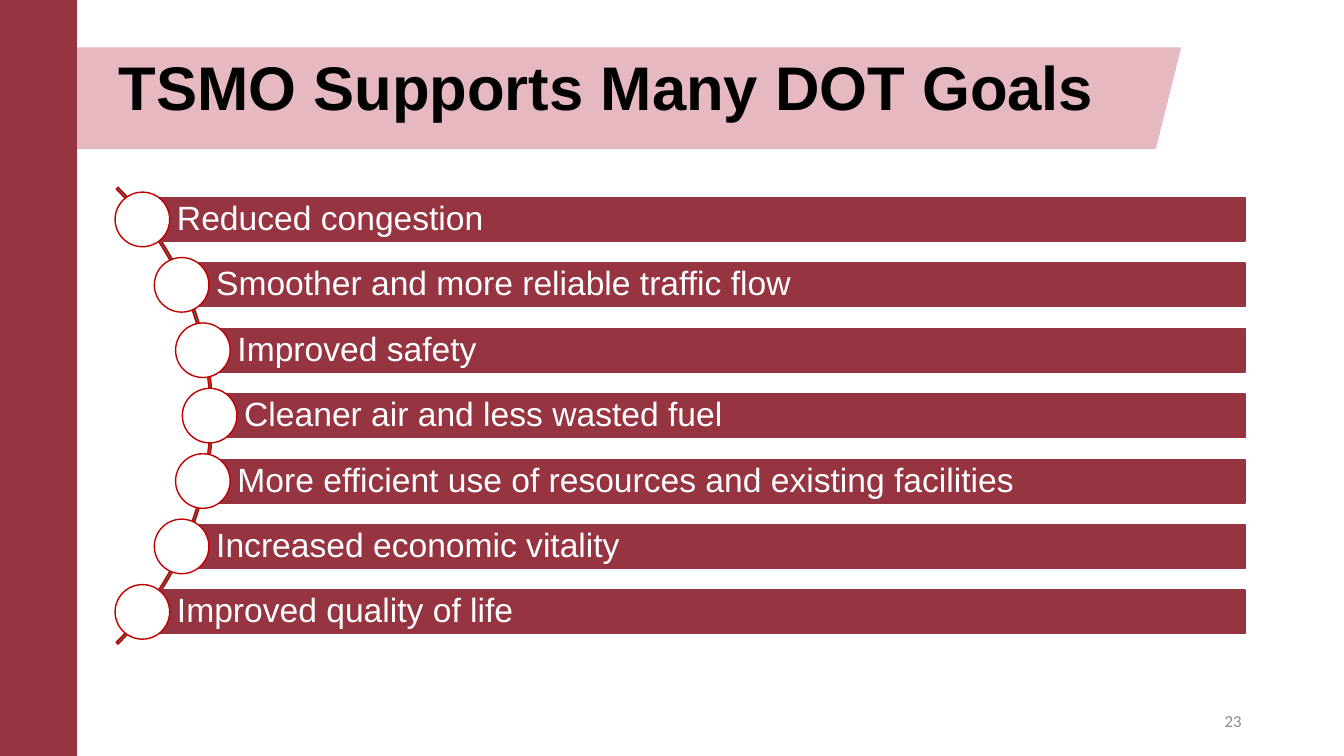
from math import sqrt

from pptx import Presentation
from pptx.dml.color import RGBColor
from pptx.enum.shapes import MSO_SHAPE
from pptx.enum.text import MSO_ANCHOR, PP_ALIGN
from pptx.util import Pt

RECTANGLE = MSO_SHAPE.RECTANGLE
PARALLELOGRAM = MSO_SHAPE.PARALLELOGRAM
BLOCK_ARC = MSO_SHAPE.BLOCK_ARC
OVAL = MSO_SHAPE.OVAL
MIDDLE = MSO_ANCHOR.MIDDLE
LEFT, RIGHT = PP_ALIGN.LEFT, PP_ALIGN.RIGHT

MAROON, PINK, RED = "963442", "E6B8BF", "C00000"
GREEN, WHITE, BLACK, GRAY = "427666", "FFFFFF", "000000", "8C8C8C"

GOALS = [
    "Reduced congestion",
    "Smoother and more reliable traffic flow",
    "Improved safety",
    "Cleaner air and less wasted fuel",
    "More efficient use of resources and existing facilities",
    "Increased economic vitality",
    "Improved quality of life",
]

prs = Presentation()
prs.slide_width, prs.slide_height = Pt(960), Pt(540)
slide = prs.slides.add_slide(prs.slide_layouts[6])


def add_figure(kind, left, top, width, height, fill, line=None):
    figure = slide.shapes.add_shape(kind, Pt(left), Pt(top), Pt(width), Pt(height))
    figure.shadow.inherit = False
    figure.fill.solid()
    figure.fill.fore_color.rgb = RGBColor.from_string(fill)
    if line:
        figure.line.color.rgb = RGBColor.from_string(line)
        figure.line.width = Pt(1)
    else:
        figure.line.fill.background()
    return figure


def write_text(shape, text, color, font_format, paragraph_format, frame_format):
    frame = shape.text_frame
    paragraph = frame.paragraphs[0]
    run = paragraph.add_run()
    run.text = text
    run.font.color.rgb = RGBColor.from_string(color)
    frame_format = {"word_wrap": True, "vertical_anchor": MIDDLE, **frame_format}
    for target, values in ((run.font, font_format), (paragraph, paragraph_format),
                           (frame, frame_format)):
        for name, value in values.items():
            setattr(target, name, value)


# Title band and side rail
add_figure(PARALLELOGRAM, 17.3, 33.8, 826.5, 72.8, PINK)
add_figure(RECTANGLE, 0, 0, 55, 540, MAROON)
title = slide.shapes.add_textbox(Pt(77.8), Pt(36), Pt(734.4), Pt(57.6))
write_text(title, "TSMO Supports Many DOT Goals", BLACK,
           {"name": "Arial", "size": Pt(44), "bold": True},
           {"alignment": LEFT, "line_spacing": 0.9}, {})

# Arc that carries the goals
arc_x, arc_y, arc_size = -78.85, 296.9, 461.5
arc = add_figure(BLOCK_ARC, arc_x - arc_size / 2, arc_y - arc_size / 2,
                 arc_size, arc_size, GREEN, RED)
for index, value in enumerate((189, 27, 0.004)):
    arc.adjustments[index] = value

# Goals: each bar starts at the centre of its dot, which lies on a circle
orbit, pitch = 228.6, 46.72
bar_right, bar_height, dot_size = 889.4, 31.1, 39
goal_font = {"name": "Arial", "size": Pt(24)}
goal_paragraph = {"alignment": LEFT, "line_spacing": 0.9}
goal_frame = {"margin_left": Pt(24.7), "margin_right": Pt(5),
              "margin_top": Pt(5), "margin_bottom": Pt(5)}
for row, goal in enumerate(GOALS):
    offset = (row - (len(GOALS) - 1) / 2) * pitch
    dot_x = arc_x + sqrt(orbit ** 2 - offset ** 2)
    dot_y = arc_y + offset
    bar = add_figure(RECTANGLE, dot_x, dot_y - bar_height / 2,
                     bar_right - dot_x, bar_height, MAROON, MAROON)
    write_text(bar, goal, WHITE, goal_font, goal_paragraph, goal_frame)
    add_figure(OVAL, dot_x - dot_size / 2, dot_y - dot_size / 2,
               dot_size, dot_size, WHITE, RED)

page_number = slide.shapes.add_textbox(Pt(678), Pt(500.5), Pt(216), Pt(28.8))
write_text(page_number, "23", GRAY, {"name": "Calibri", "size": Pt(12)},
           {"alignment": RIGHT}, {})

prs.save("out.pptx")
